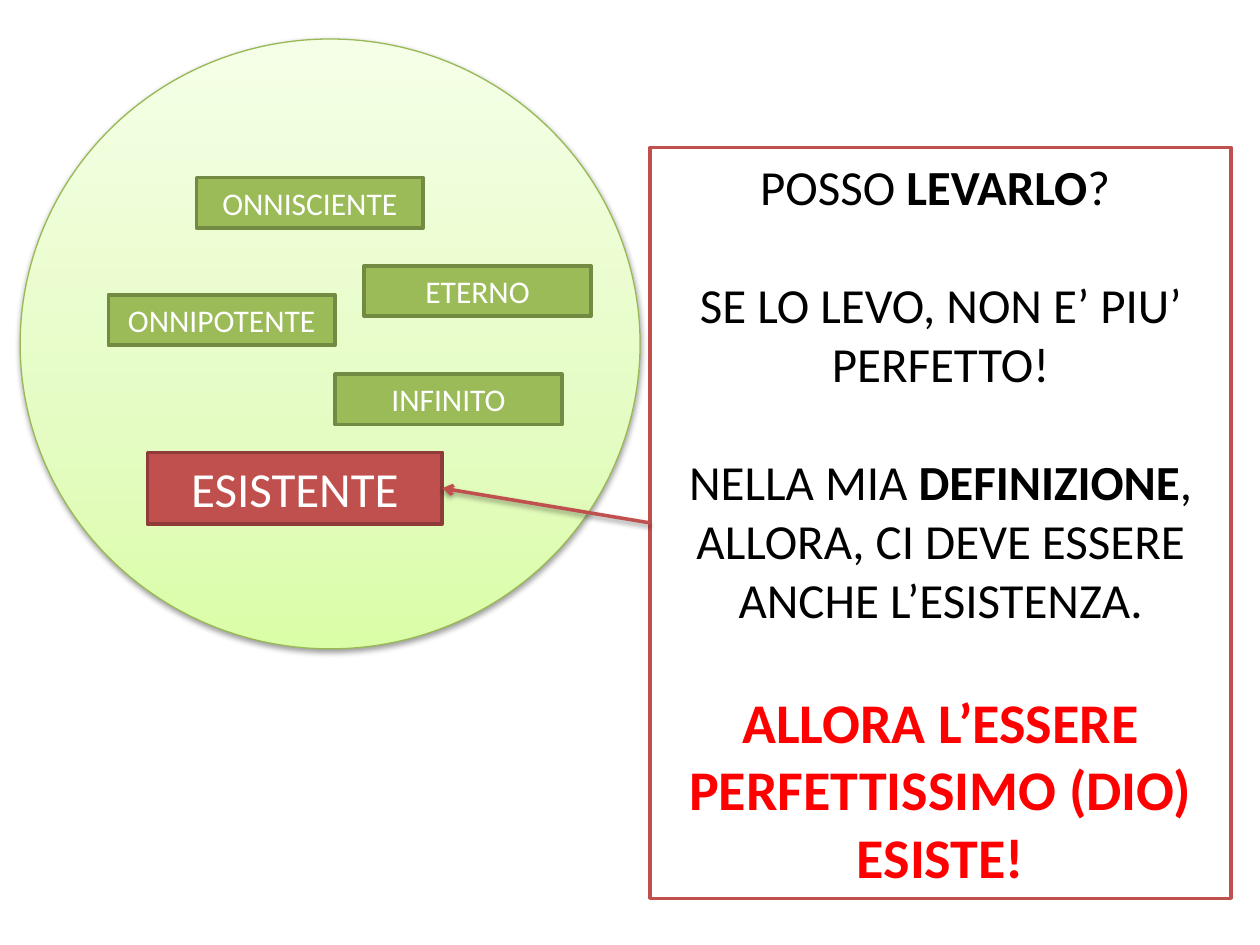
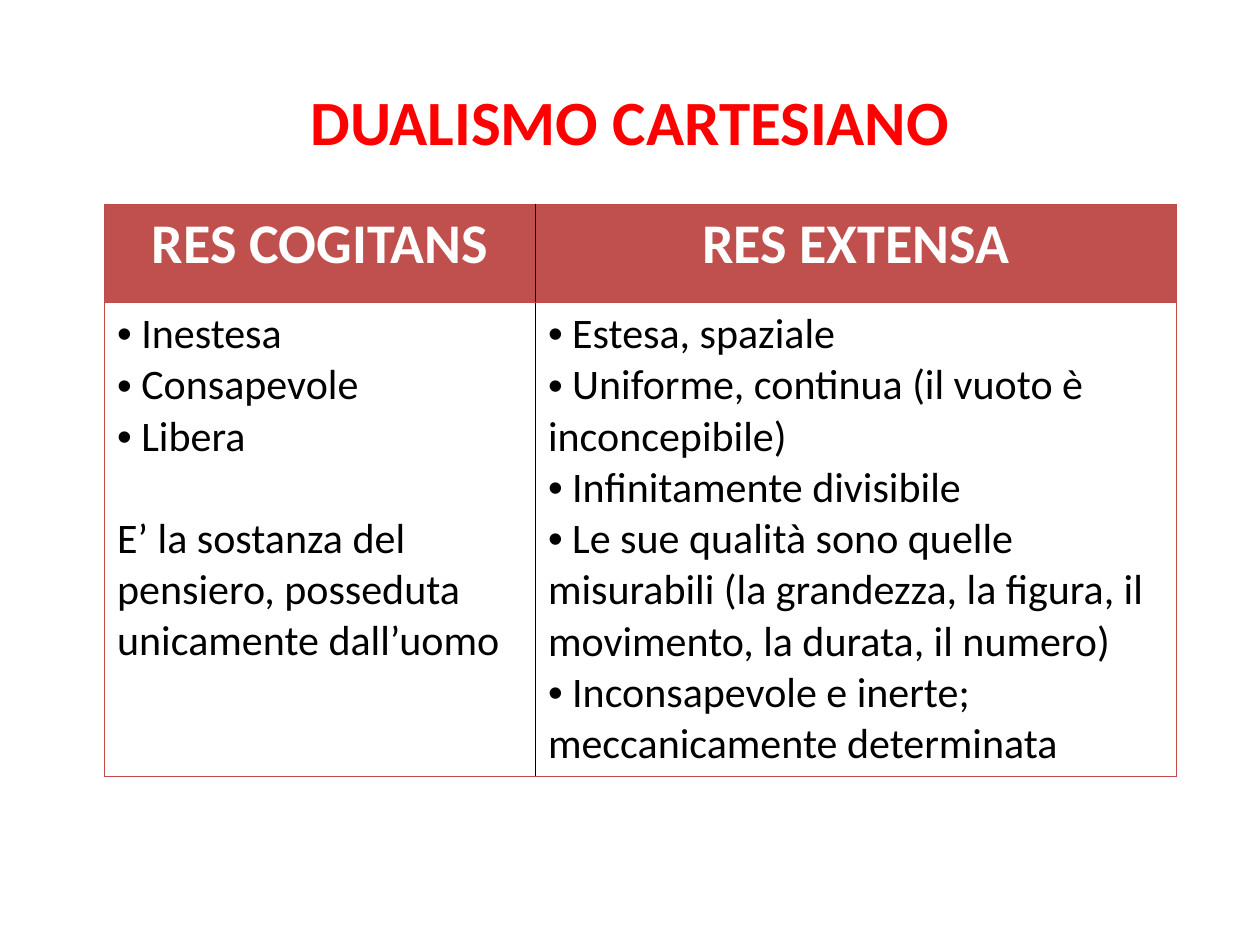
import copy
from dataclasses import dataclass

import lxml.etree
import pptx
import pptx.dml.color
import pptx.enum.shapes
import pptx.enum.text
import pptx.oxml.ns
import pptx.util

Inches = pptx.util.Inches
Pt = pptx.util.Pt
qn = pptx.oxml.ns.qn
CENTER = pptx.enum.text.PP_ALIGN.CENTER
LEFT = pptx.enum.text.PP_ALIGN.LEFT
SHAPES = pptx.enum.shapes.MSO_SHAPE


@dataclass(frozen=True)
class Theme:
    font: str = "Calibri"
    black: str = "000000"
    white: str = "FFFFFF"
    accent: str = "FF0000"
    green: str = "9BBB59"
    green_edge: str = "738A42"
    circle_edge: str = "98B955"
    circle_stops: tuple = ((0, "DAFDA7"), (0.35, "E4FCC2"), (1, "F5FFE7"))
    red: str = "C0504D"
    red_edge: str = "8E3B39"
    table_edge: str = "BF4C48"
    label: int = 18
    body: int = 24
    large: int = 28
    heading: int = 32
    title: int = 36
    edge: float = 2
    thin_edge: float = 0.75
    divider: float = 1


THEME = Theme()


def rgb(color):
    return pptx.dml.color.RGBColor.from_string(color)


def add_span(para, text, size, color, bold=False):
    span = para.add_run()
    span.text = text
    span.font.name = THEME.font
    span.font.size = Pt(size)
    span.font.bold = bold
    span.font.color.rgb = rgb(color)


def next_para(frame, align=CENTER, gap=0):
    """Return the frame's unused first paragraph, or a new one."""
    para = frame.paragraphs[0]
    if para.runs:
        para = frame.add_paragraph()
    para.alignment = align
    para.space_before = Pt(gap)
    return para


def set_line(line, color, width):
    line.color.rgb = rgb(color)
    line.width = Pt(width)


def add_child(parent, tag, **attributes):
    return lxml.etree.SubElement(parent, qn(tag), attributes)


def cast_shadow(properties):
    """Give a shape or connector a soft shadow straight below it."""
    effects = properties.find(qn("a:effectLst"))
    if effects is None:
        effects = add_child(properties, "a:effectLst")
    shadow = add_child(effects, "a:outerShdw", blurRad=str(Pt(3.1)), dist=str(Pt(1.6)),
                       dir="5400000", rotWithShape="0")
    color = add_child(shadow, "a:srgbClr", val=THEME.black)
    add_child(color, "a:alpha", val="38000")


def add_box(slide, left, top, width, height, fill, edge):
    box = slide.shapes.add_shape(SHAPES.RECTANGLE, Inches(left), Inches(top),
                                 Inches(width), Inches(height))
    box.shadow.inherit = False
    box.fill.solid()
    box.fill.fore_color.rgb = rgb(fill)
    set_line(box.line, edge, THEME.edge)
    box.text_frame.word_wrap = True
    box.text_frame.vertical_anchor = pptx.enum.text.MSO_ANCHOR.MIDDLE
    return box


def add_label(slide, text, left, top):
    box = add_box(slide, left, top, 1.8, 0.4, THEME.green, THEME.green_edge)
    add_span(next_para(box.text_frame), text, THEME.label, THEME.white)


def add_gradient_circle(slide):
    circle = slide.shapes.add_shape(SHAPES.OVAL, Inches(0.16), Inches(0.31),
                                    Inches(4.92), Inches(4.84))
    circle.fill.gradient()
    circle.fill.gradient_angle = 90
    stop_list = circle.element.spPr.find(".//" + qn("a:gsLst"))
    stop_list.append(copy.deepcopy(stop_list[0]))
    for stop, (position, color) in zip(circle.fill.gradient_stops, THEME.circle_stops):
        stop.position = position
        stop.color.rgb = rgb(color)
    set_line(circle.line, THEME.circle_edge, THEME.thin_edge)
    circle.shadow.inherit = False
    cast_shadow(circle.element.spPr)


def add_arrow(slide, source, target):
    """Join the left side of source to the right side of target."""
    arrow = slide.shapes.add_connector(pptx.enum.shapes.MSO_CONNECTOR.STRAIGHT, 0, 0, 0, 0)
    arrow.begin_connect(source, 1)
    arrow.end_connect(target, 3)
    set_line(arrow.line, THEME.red, THEME.edge)
    properties = arrow._element.spPr
    add_child(properties.find(qn("a:ln")), "a:tailEnd", type="arrow")
    cast_shadow(properties)


def add_argument(slide):
    panel = add_box(slide, 5.16, 1.17, 4.61, 5.96, THEME.white, THEME.red)
    argument = [
        [("POSSO ", False), ("LEVARLO", True), ("? ", False)],
        [("SE LO LEVO, NON E’ PIU’ PERFETTO!", False)],
        [("NELLA MIA ", False), ("DEFINIZIONE", True),
         (", ALLORA, CI DEVE ESSERE ANCHE L’ESISTENZA.", False)],
    ]
    blank_line = 34
    for index, spans in enumerate(argument):
        para = next_para(panel.text_frame, gap=blank_line if index else 0)
        for text, bold in spans:
            add_span(para, text, THEME.large, THEME.black, bold)
    para = next_para(panel.text_frame, gap=blank_line)
    add_span(para, "ALLORA L’ESSERE PERFETTISSIMO (DIO) ESISTE!",
             THEME.heading, THEME.accent, True)
    return panel


def add_title(slide, text):
    title = slide.shapes.title
    title.left, title.top = Inches(0.67), Inches(0.6)
    title.width, title.height = Inches(8.66), Inches(0.71)
    title.text_frame.auto_size = pptx.enum.text.MSO_AUTO_SIZE.NONE
    add_span(next_para(title.text_frame), text, THEME.title, THEME.accent, True)


def set_borders(cell, inner_side):
    """Frame a cell in red, with a black divider on its inner side."""
    properties = cell._tc.get_or_add_tcPr()
    for index, side in enumerate(("lnL", "lnR", "lnT", "lnB")):
        inner = side == inner_side
        width = THEME.divider if inner else THEME.thin_edge
        line = lxml.etree.Element(qn("a:" + side), w=str(Pt(width)))
        fill = add_child(line, "a:solidFill")
        add_child(fill, "a:srgbClr", val=THEME.black if inner else THEME.table_edge)
        properties.insert(index, line)


def add_bullet(para):
    properties = para._p.get_or_add_pPr()
    properties.set("marL", "0")
    properties.set("indent", "0")
    add_child(properties, "a:buFont", typeface="Arial")
    add_child(properties, "a:buChar", char="•")


def add_comparison(slide, columns):
    """Draw one column per (width, heading, bullets, closing text)."""
    header_height, body_height = 0.78, 3.7
    table = slide.shapes.add_table(
        2, len(columns), Inches(0.83), Inches(1.62),
        Inches(sum(column[0] for column in columns)),
        Inches(header_height + body_height)).table
    table.first_row = table.horz_banding = False
    table.rows[0].height = Inches(header_height)
    table.rows[1].height = Inches(body_height)
    for index, (width, heading, bullets, closing) in enumerate(columns):
        table.columns[index].width = Inches(width)
        header, body = table.cell(0, index), table.cell(1, index)
        header.fill.solid()
        header.fill.fore_color.rgb = rgb(THEME.red)
        body.fill.background()
        for cell in (header, body):
            set_borders(cell, "lnL" if index else "lnR")
        add_span(next_para(header.text_frame), heading, THEME.heading, THEME.white, True)
        for text in bullets:
            para = next_para(body.text_frame, LEFT)
            add_bullet(para)
            add_span(para, " " + text, THEME.body, THEME.black)
        if closing:
            para = next_para(body.text_frame, LEFT, gap=29)
            add_span(para, closing, THEME.body, THEME.black)


def build_existence_slide(deck):
    slide = deck.slides.add_slide(deck.slide_layouts.get_by_name("Blank"))
    add_gradient_circle(slide)
    for text, left, top in (("ONNIPOTENTE", 0.86, 2.34), ("ONNISCIENTE", 1.56, 1.41),
                            ("INFINITO", 2.66, 2.97), ("ETERNO", 2.89, 2.11)):
        add_label(slide, text, left, top)
    existing = add_box(slide, 1.17, 3.59, 2.34, 0.57, THEME.red, THEME.red_edge)
    add_span(next_para(existing.text_frame), "ESISTENTE", THEME.large, THEME.white)
    add_arrow(slide, add_argument(slide), existing)


def build_dualism_slide(deck):
    slide = deck.slides.add_slide(deck.slide_layouts.get_by_name("Title Only"))
    add_title(slide, "DUALISMO CARTESIANO")
    add_comparison(slide, [
        (3.42, "RES COGITANS", ["Inestesa", "Consapevole", "Libera"],
         "E’ la sostanza del pensiero, posseduta unicamente dall’uomo"),
        (5.09, "RES EXTENSA",
         ["Estesa, spaziale",
          "Uniforme, continua (il vuoto è inconcepibile)",
          "Infinitamente divisibile",
          "Le sue qualità sono quelle misurabili (la grandezza, la figura, "
          "il movimento, la durata, il numero)",
          "Inconsapevole e inerte; meccanicamente determinata"], None),
    ])


def main():
    deck = pptx.Presentation()
    deck.slide_width, deck.slide_height = Inches(10), Inches(7.5)
    build_existence_slide(deck)
    build_dualism_slide(deck)
    deck.save("out.pptx")


if __name__ == "__main__":
    main()
